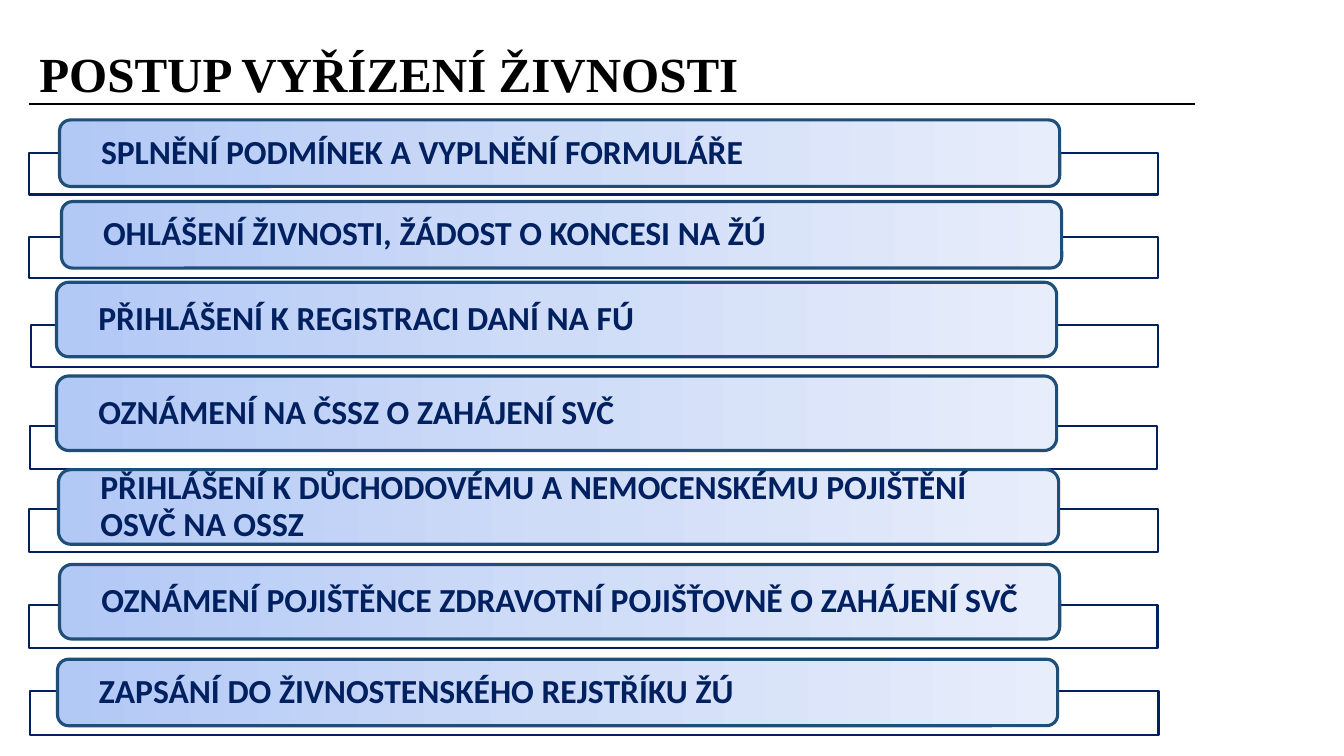
import copy

import lxml.etree
import pptx
import pptx.dml.color
import pptx.enum.shapes
import pptx.enum.text
import pptx.oxml.ns
import pptx.util

Inches, Pt = pptx.util.Inches, pptx.util.Pt
qn = pptx.oxml.ns.qn
SHAPES = pptx.enum.shapes.MSO_SHAPE

COLORS = {
    "black": "000000",
    "white": "FFFFFF",
    "navy": "002060",
    "border": "1F4E79",
    "gradient": ["B2C8F5", "CFDCF8", "E7EDFB"],
}

# Step text, frame (left, top, width, height), box (left, top, height)
STEPS = [
    ("SPLNĚNÍ PODMÍNEK A VYPLNĚNÍ FORMULÁŘE",
     (0.29, 1.52, 11.2, 0.41), (0.59, 1.19, 0.66)),
    ("OHLÁŠENÍ ŽIVNOSTI, ŽÁDOST O KONCESI NA ŽÚ",
     (0.29, 2.35, 11.2, 0.41), (0.61, 2, 0.66)),
    ("PŘIHLÁŠENÍ K REGISTRACI DANÍ NA FÚ",
     (0.31, 3.22, 11.18, 0.42), (0.56, 2.8, 0.74)),
    ("OZNÁMENÍ NA ČSSZ O ZAHÁJENÍ SVČ",
     (0.3, 4.23, 11.18, 0.42), (0.56, 3.73, 0.74)),
    ("PŘIHLÁŠENÍ K DŮCHODOVÉMU A NEMOCENSKÉMU POJIŠTĚNÍ OSVČ NA OSSZ",
     (0.29, 5.05, 11.2, 0.43), (0.58, 4.66, 0.74)),
    ("OZNÁMENÍ POJIŠTĚNCE ZDRAVOTNÍ POJIŠŤOVNĚ O ZAHÁJENÍ SVČ",
     (0.29, 6, 11.19, 0.43), (0.59, 5.6, 0.74)),
    ("ZAPSÁNÍ DO ŽIVNOSTENSKÉHO REJSTŘÍKU ŽÚ",
     (0.3, 6.86, 11.19, 0.43), (0.57, 6.54, 0.66)),
]
BOX_WIDTH = 9.92


def rgb(value):
    return pptx.dml.color.RGBColor.from_string(value)


def format_text(frame, text, font_name, size, color):
    """Write one bold, left-aligned, vertically centred paragraph."""
    frame.text = text
    frame.word_wrap = True
    frame.auto_size = pptx.enum.text.MSO_AUTO_SIZE.NONE
    frame.vertical_anchor = pptx.enum.text.MSO_ANCHOR.MIDDLE
    paragraph = frame.paragraphs[0]
    paragraph.alignment = pptx.enum.text.PP_ALIGN.LEFT
    paragraph.line_spacing = 0.9
    paragraph.font.name = font_name
    paragraph.font.size = Pt(size)
    paragraph.font.bold = True
    paragraph.font.color.rgb = rgb(color)


presentation = pptx.Presentation()
presentation.slide_width = Inches(13.33)
presentation.slide_height = Inches(7.5)
slide = presentation.slides.add_slide(presentation.slide_layouts[5])

title = slide.shapes.title
title.left, title.top = Inches(0.29), Inches(0.43)
title.width, title.height = Inches(10.05), Inches(0.67)
format_text(title.text_frame, "POSTUP VYŘÍZENÍ ŽIVNOSTI",
            "Times New Roman", 35, COLORS["black"])

for step, frame_place, (left, top, height) in STEPS:
    frame = slide.shapes.add_shape(SHAPES.RECTANGLE, *map(Inches, frame_place))
    frame.shadow.inherit = False
    frame.fill.solid()
    frame.fill.fore_color.rgb = rgb(COLORS["white"])
    frame_color = frame._element.spPr.find(qn("a:solidFill"))[0]
    lxml.etree.SubElement(frame_color, qn("a:alpha"), val="90000")
    frame.line.color.rgb = rgb(COLORS["navy"])
    frame.line.width = Pt(1.5)

    box = slide.shapes.add_shape(
        SHAPES.ROUNDED_RECTANGLE,
        Inches(left), Inches(top), Inches(BOX_WIDTH), Inches(height))
    box.shadow.inherit = False
    box.fill.gradient()
    box.fill.gradient_angle = 0
    stop_list = box._element.spPr.find(qn("a:gradFill")).find(qn("a:gsLst"))
    stop_list.insert(1, copy.deepcopy(stop_list[0]))
    for index, stop in enumerate(box.fill.gradient_stops):
        stop.position = index / 2
        stop.color.rgb = rgb(COLORS["gradient"][index])
    box.line.color.rgb = rgb(COLORS["border"])
    box.line.width = Pt(2.25)

    text = box.text_frame
    text.margin_left, text.margin_right = Inches(0.38), Inches(0.3)
    text.margin_top = text.margin_bottom = 0
    format_text(text, step, "Calibri", 24, COLORS["navy"])

title_rule = slide.shapes.add_connector(
    pptx.enum.shapes.MSO_CONNECTOR.STRAIGHT,
    Inches(0.29), Inches(1.03), Inches(11.85), Inches(1.03))
title_rule.line.color.rgb = rgb(COLORS["black"])
title_rule.line.width = Pt(1.5)
lxml.etree.SubElement(title_rule._element.spPr, qn("a:effectLst"))

presentation.save("out.pptx")
